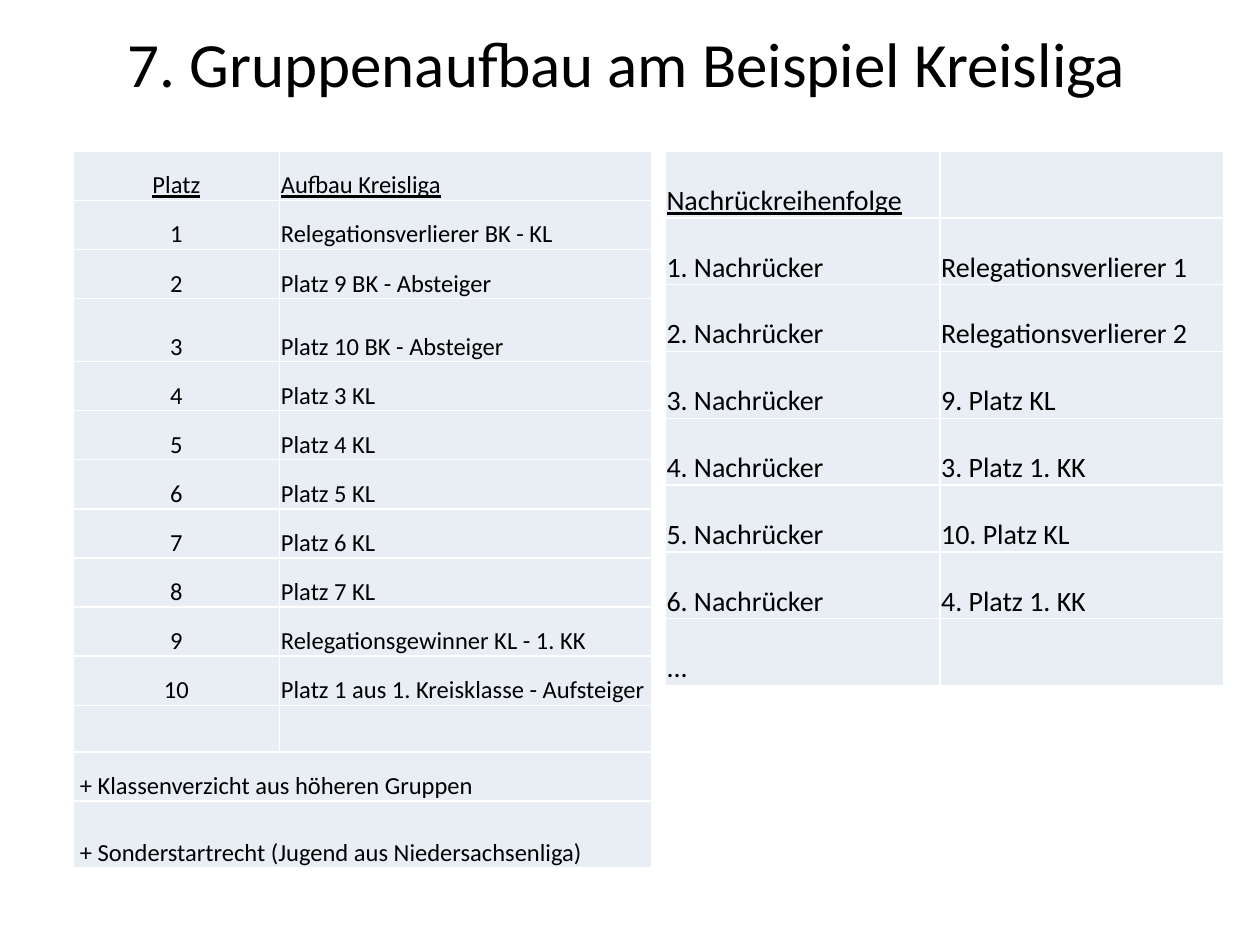
from dataclasses import dataclass

from lxml.etree import SubElement
from pptx import Presentation
from pptx.dml.color import RGBColor
from pptx.enum.text import MSO_ANCHOR as Anchor, PP_ALIGN as Align
from pptx.oxml.ns import qn
from pptx.util import Inches, Pt


@dataclass(frozen=True)
class Theme:
    font: str = "Calibri"
    text: RGBColor = RGBColor(0, 0, 0)
    cell: RGBColor = RGBColor(0xE9, 0xED, 0xF4)
    border: str = "FFFFFF"
    border_width: int = Pt(1)
    title_size: int = Pt(36)
    league_size: int = Pt(14)
    substitute_size: int = Pt(16)


THEME = Theme()

LEAGUE_ROWS = [
    ("Platz", "Aufbau Kreisliga"),
    ("1", "Relegationsverlierer BK - KL"),
    ("2", "Platz 9 BK - Absteiger"),
    ("3", "Platz 10 BK - Absteiger"),
    ("4", "Platz 3 KL"),
    ("5", "Platz 4 KL"),
    ("6", "Platz 5 KL"),
    ("7", "Platz 6 KL"),
    ("8", "Platz 7 KL"),
    ("9", "Relegationsgewinner KL - 1. KK"),
    ("10", "Platz 1 aus 1. Kreisklasse - Aufsteiger"),
    ("", ""),
    (" + Klassenverzicht aus höheren Gruppen",),
    (" + Sonderstartrecht (Jugend aus Niedersachsenliga)",),
]
LEAGUE_HEIGHTS = [0.39] * 3 + [0.5] + [0.39] * 7 + [0.37, 0.39, 0.53]

SUBSTITUTE_ROWS = [
    ("Nachrückreihenfolge", ""),
    ("1. Nachrücker", "Relegationsverlierer 1"),
    ("2. Nachrücker", "Relegationsverlierer 2"),
    ("3. Nachrücker", "9. Platz KL"),
    ("4. Nachrücker", "3. Platz 1. KK"),
    ("5. Nachrücker", "10. Platz KL"),
    ("6. Nachrücker", "4. Platz 1. KK"),
    ("...", ""),
]


def add_text(p, text, size, align, underline=False):
    p.alignment = align
    r = p.add_run()
    r.text = text
    r.font.name = THEME.font
    r.font.size = size
    r.font.underline = underline
    r.font.color.rgb = THEME.text


def style_cell(cell):
    tc_pr = cell._tc.get_or_add_tcPr()
    for side in ("a:lnL", "a:lnR", "a:lnT", "a:lnB"):
        ln = SubElement(tc_pr, qn(side), w=str(THEME.border_width))
        fill = SubElement(ln, qn("a:solidFill"))
        SubElement(fill, qn("a:srgbClr"), val=THEME.border)
    cell.fill.solid()
    cell.fill.fore_color.rgb = THEME.cell
    cell.margin_left = cell.margin_right = cell.margin_top = Inches(0.01)
    cell.margin_bottom = 0
    cell.vertical_anchor = Anchor.BOTTOM


def add_title(s, box, text):
    title = s.shapes.title
    title.left, title.top, title.width, title.height = map(Inches, box)
    tf = title.text_frame
    tf.vertical_anchor = Anchor.MIDDLE
    add_text(tf.paragraphs[0], text, THEME.title_size, Align.CENTER)


def add_grid(s, box, rows, widths, heights, size, first_align):
    frame = s.shapes.add_table(len(rows), len(widths), *map(Inches, box))
    table = frame.table
    table.first_row = table.horz_banding = False
    for column, width in zip(table.columns, widths):
        column.width = Inches(width)
    for i, (values, height) in enumerate(zip(rows, heights)):
        table.rows[i].height = Inches(height)
        for cell in table.rows[i].cells:
            style_cell(cell)
        spanning = len(values) == 1
        if spanning:
            table.cell(i, 0).merge(table.cell(i, len(widths) - 1))
        for j, value in enumerate(values):
            if value:
                align = first_align if j == 0 and not spanning else Align.LEFT
                p = table.cell(i, j).text_frame.paragraphs[0]
                add_text(p, value, size, align, underline=i == 0)


def main():
    prs = Presentation()
    prs.slide_width, prs.slide_height = Inches(10), Inches(7.5)
    s = prs.slides.add_slide(prs.slide_layouts[5])
    add_title(s, (0.58, 0.12, 8.79, 0.75), "7. Gruppenaufbau am Beispiel Kreisliga")
    add_grid(s, (5.28, 1.2, 4.42, 4.28), SUBSTITUTE_ROWS, (2.18, 2.25),
             [0.53] * len(SUBSTITUTE_ROWS), THEME.substitute_size, Align.LEFT)
    add_grid(s, (0.58, 1.2, 4.59, 5.72), LEAGUE_ROWS, (1.64, 2.95),
             LEAGUE_HEIGHTS, THEME.league_size, Align.CENTER)
    prs.save("out.pptx")


if __name__ == "__main__":
    main()
